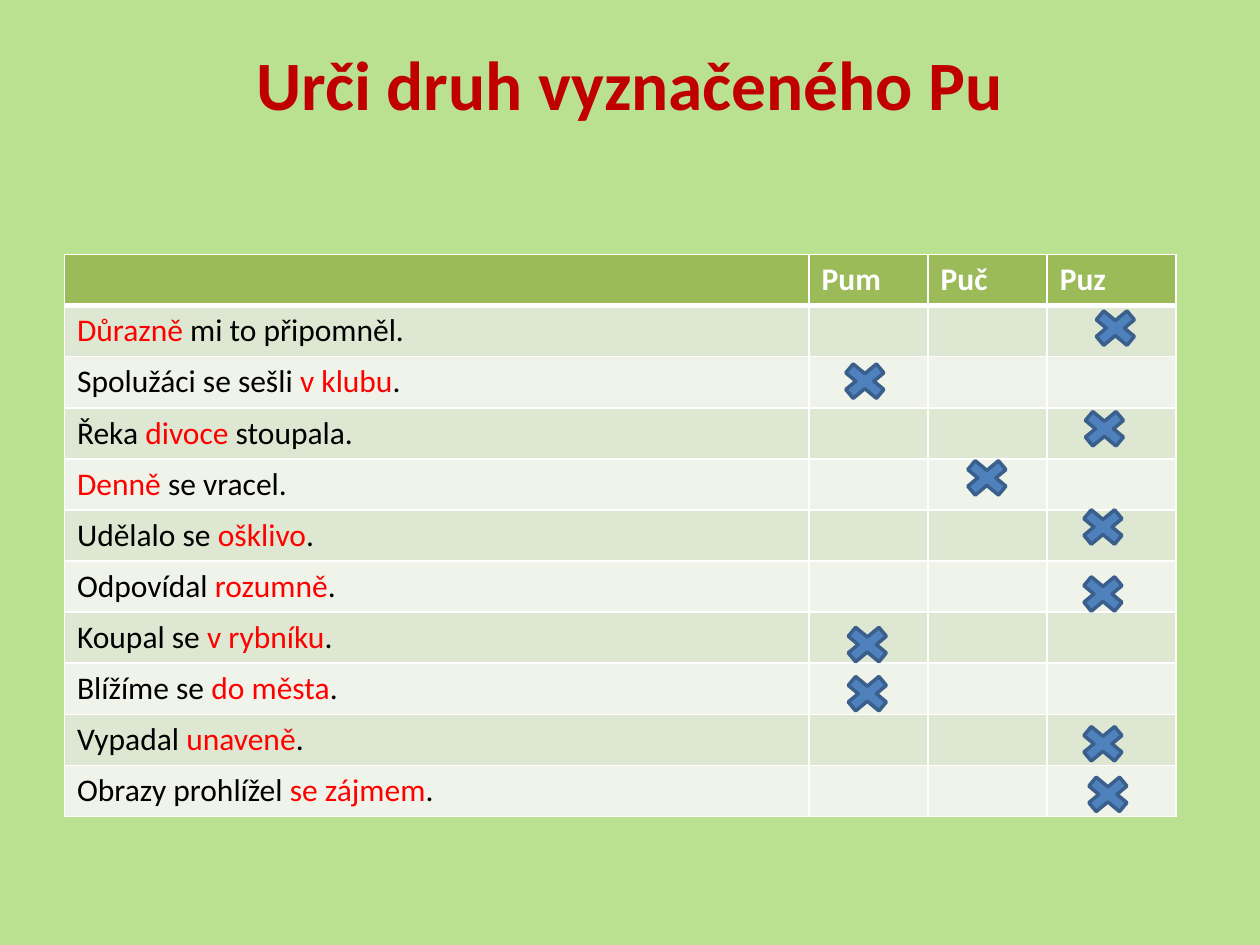
from lxml.etree import SubElement
from pptx import Presentation
from pptx.dml.color import RGBColor
from pptx.enum.shapes import MSO_SHAPE
from pptx.enum.text import MSO_ANCHOR, MSO_AUTO_SIZE, PP_ALIGN
from pptx.oxml.ns import qn
from pptx.util import Cm, Pt

COLORS = {
    "background": "B9E18F",
    "title": "C00000",
    "header": "9BBB59",
    "odd_row": "DEE7D1",
    "even_row": "EFF3EA",
    "border": "FFFFFF",
    "header_text": "FFFFFF",
    "text": "000000",
    "adverbial": "FF0000",
    "cross": "4F81BD",
    "cross_line": "3A5F8C",
}

HEADINGS = ["", "Pum", "Puč", "Puz"]
COLUMN_WIDTHS = [15.01, 2.4, 2.4, 2.6]
ROW_HEIGHT = 1.03

# Text before the adverbial, the adverbial, text after it, left and top of the cross
SENTENCES = [
    ("", "Důrazně ", "mi to připomněl.", 21.89, 6.12),
    ("Spolužáci se sešli ", "v klubu", ".", 16.84, 7.19),
    ("Řeka ", "divoce", " stoupala.", 21.67, 8.15),
    ("", "Denně", " se vracel.", 19.3, 9.14),
    ("Udělalo se ", "ošklivo", ".", 21.64, 10.13),
    ("Odpovídal ", "rozumně", ".", 21.64, 11.48),
    ("Koupal se ", "v rybníku", ".", 16.89, 12.5),
    ("Blížíme se ", "do města", ".", 16.89, 13.49),
    ("Vypadal ", "unaveně", ".", 21.64, 14.5),
    ("Obrazy prohlížel ", "se zájmem", ".", 21.74, 15.52),
]


def rgb(role):
    return RGBColor.from_string(COLORS[role])


def set_attributes(target, values):
    for attribute, value in values.items():
        setattr(target, attribute, value)


def paint(fill, role):
    fill.solid()
    fill.fore_color.rgb = rgb(role)


def add_run(paragraph, text, role, size=18, bold=False):
    run = paragraph.add_run()
    run.text = text
    set_attributes(run.font, {"name": "Calibri", "size": Pt(size), "bold": bold})
    run.font.color.rgb = rgb(role)


def add_title(slide, text):
    title = slide.shapes.title
    set_attributes(title, {"left": Cm(1.27), "top": Cm(0.76),
                           "width": Cm(22.86), "height": Cm(1.83)})
    set_attributes(title.text_frame, {"vertical_anchor": MSO_ANCHOR.MIDDLE,
                                      "auto_size": MSO_AUTO_SIZE.NONE,
                                      "word_wrap": True})
    paragraph = title.text_frame.paragraphs[0]
    paragraph.alignment = PP_ALIGN.CENTER
    add_run(paragraph, text, "title", size=39.6, bold=True)


def format_cell(cell, role, borders):
    properties = cell._tc.get_or_add_tcPr()
    for side, width in borders.items():
        line = SubElement(properties, qn(f"a:{side}"), w=str(Pt(width)))
        fill = SubElement(line, qn("a:solidFill"))
        SubElement(fill, qn("a:srgbClr"), val=COLORS["border"])
    paint(cell.fill, role)


def add_sentence_table(slide):
    row_count = len(SENTENCES) + 1
    table = slide.shapes.add_table(
        row_count, len(HEADINGS), Cm(1.3), Cm(5.13),
        Cm(sum(COLUMN_WIDTHS)), Cm(ROW_HEIGHT * row_count)).table
    for column, width in zip(table.columns, COLUMN_WIDTHS):
        column.width = Cm(width)

    # Row bands and borders
    for number, row in enumerate(table.rows):
        row.height = Cm(ROW_HEIGHT)
        borders = {"lnL": 1, "lnR": 1, "lnB": 1}
        role = "odd_row" if number % 2 else "even_row"
        if number == 0:
            borders = {"lnL": 1, "lnR": 1, "lnT": 1, "lnB": 3}
            role = "header"
        for cell in row.cells:
            format_cell(cell, role, borders)

    # Headings
    for column, heading in enumerate(HEADINGS):
        if heading:
            paragraph = table.cell(0, column).text_frame.paragraphs[0]
            add_run(paragraph, heading, "header_text", bold=True)

    # Sentences with the adverbial highlighted
    for number, (before, adverbial, after, *_) in enumerate(SENTENCES, start=1):
        paragraph = table.cell(number, 0).text_frame.paragraphs[0]
        if before:
            add_run(paragraph, before, "text")
        add_run(paragraph, adverbial, "adverbial")
        add_run(paragraph, after, "text")


def add_cross(slide, left, top):
    cross = slide.shapes.add_shape(
        MSO_SHAPE.MATH_MULTIPLY, Cm(left), Cm(top), Cm(1.19), Cm(0.99))
    cross.shadow.inherit = False
    paint(cross.fill, "cross")
    paint(cross.line.fill, "cross_line")
    cross.line.width = Pt(2)


def main():
    presentation = Presentation()
    set_attributes(presentation, {"slide_width": Cm(25.4), "slide_height": Cm(19.05)})
    slide = presentation.slides.add_slide(presentation.slide_layouts[5])
    paint(slide.background.fill, "background")

    add_title(slide, "Urči druh vyznačeného Pu")
    add_sentence_table(slide)
    for *_, left, top in SENTENCES:
        add_cross(slide, left, top)

    presentation.save("out.pptx")


if __name__ == "__main__":
    main()
